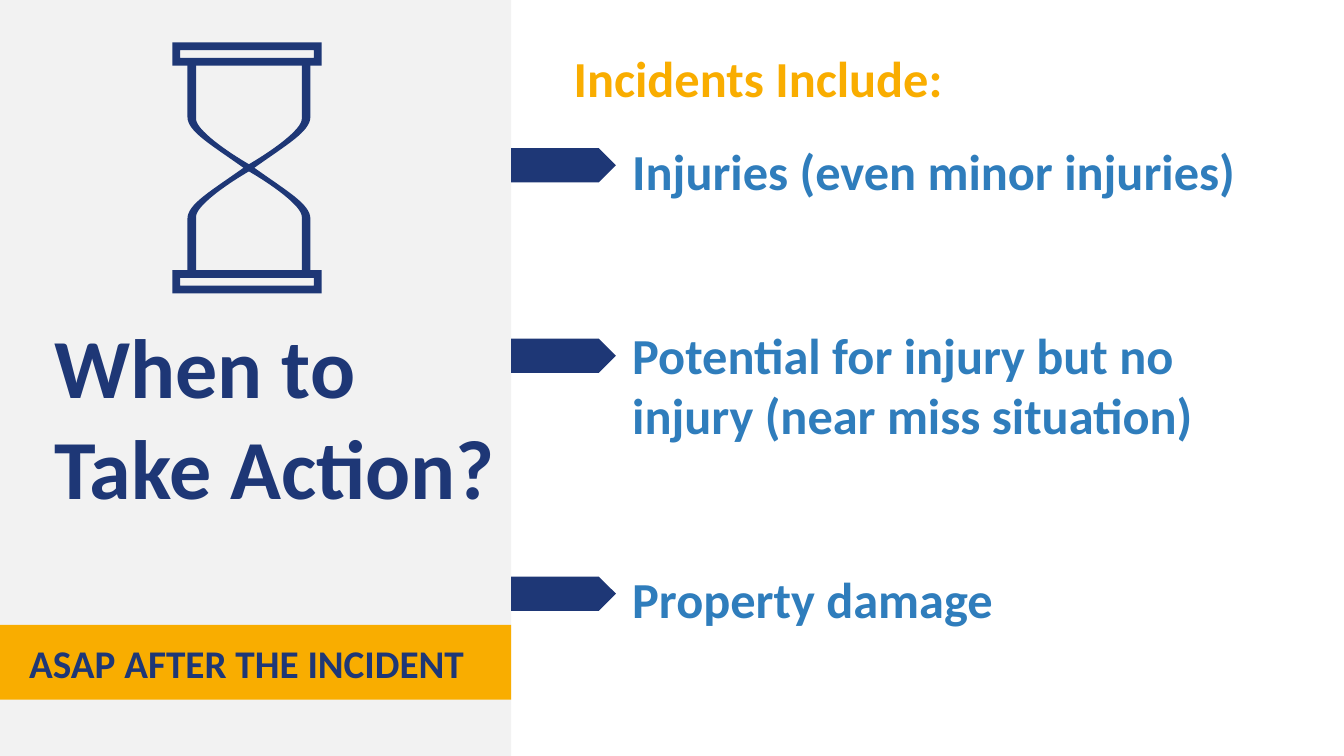
from dataclasses import dataclass

from pptx import Presentation
from pptx.dml.color import RGBColor
from pptx.enum.shapes import MSO_SHAPE
from pptx.enum.text import MSO_ANCHOR, MSO_AUTO_SIZE, PP_ALIGN
from pptx.util import Inches, Pt

SLIDE_WIDTH = Inches(13.33)
SLIDE_HEIGHT = Inches(7.5)


@dataclass(frozen=True)
class Theme:
    font: str = "Calibri"
    navy: RGBColor = RGBColor.from_string("1E3776")
    amber: RGBColor = RGBColor.from_string("F9AD00")
    blue: RGBColor = RGBColor.from_string("2F7DBC")
    panel_grey: RGBColor = RGBColor.from_string("F2F2F2")
    title_size: int = 60
    list_size: int = 36
    banner_size: int = 28
    incident_gap: int = 88


THEME = Theme()
PANEL_WIDTH = 38.03
INCIDENTS = [
    "Injuries (even minor injuries)",
    "Potential for injury but no injury (near miss situation)",
    "Property damage",
]
POINTER_TOPS = [19.6, 44.8, 76.27]


def area(left, top, width, height):
    """Turn percentages of the slide into lengths."""
    return (
        round(SLIDE_WIDTH * left / 100),
        round(SLIDE_HEIGHT * top / 100),
        round(SLIDE_WIDTH * width / 100),
        round(SLIDE_HEIGHT * height / 100),
    )


def paint(shape, color):
    shape.fill.solid()
    shape.fill.fore_color.rgb = color
    shape.line.fill.background()
    shape.shadow.inherit = False


def add_block(shapes, preset, place, color):
    block = shapes.add_shape(preset, *area(*place))
    paint(block, color)
    return block


def write(holder, place, lines, size, color, align=PP_ALIGN.LEFT, gap=0):
    """Place a text holder and fill it with bold lines, gap points apart."""
    holder.left, holder.top, holder.width, holder.height = area(*place)
    frame = holder.text_frame
    frame.text = "\n".join(lines)
    frame.word_wrap = True
    frame.auto_size = MSO_AUTO_SIZE.NONE
    frame.vertical_anchor = MSO_ANCHOR.TOP
    for index, paragraph in enumerate(frame.paragraphs):
        paragraph.alignment = align
        paragraph.space_before = Pt(gap if index else 0)
        paragraph.font.name = THEME.font
        paragraph.font.size = Pt(size)
        paragraph.font.bold = True
        paragraph.font.color.rgb = color


def add_label(shapes, place, *text_format):
    write(shapes.add_textbox(*area(*place)), place, *text_format)


def remove_bullets(holder):
    for paragraph in holder.text_frame.paragraphs:
        properties = paragraph._p.get_or_add_pPr()
        properties.set("marL", "0")
        properties.set("indent", "0")
        properties.get_or_add_buNone() if hasattr(
            properties, "get_or_add_buNone"
        ) else properties.append(
            properties.makeelement(
                "{http://schemas.openxmlformats.org/drawingml/2006/main}buNone", {}
            )
        )


def curve(start, first_pull, second_pull, end, steps=16):
    """Points along a cubic Bezier curve, without its start."""
    points = []
    for step in range(1, steps + 1):
        t = step / steps
        weights = ((1 - t) ** 3, 3 * t * (1 - t) ** 2, 3 * t**2 * (1 - t), t**3)
        controls = (start, first_pull, second_pull, end)
        points.append(
            tuple(sum(w * c[axis] for w, c in zip(weights, controls)) for axis in (0, 1))
        )
    return points


def strand_outline():
    """One glass wall in a unit box; its second edge is the first turned half round."""
    shoulder, waist, neck = (0, 0.74), (0.48, 0.49), (0.93, 0.27)
    edge = [(0, 1), shoulder]
    edge += curve(shoulder, (0, 0.67), (0.19, 0.61), waist)
    edge += curve(waist, (0.69, 0.42), (0.93, 0.32), neck)
    edge.append((0.93, 0))
    return edge + [(1 - x, 1 - y) for x, y in edge]


def add_hourglass(shapes):
    hourglass = shapes.add_group_shape().shapes
    for cap_top in (5.6, 35.73):
        cap = add_block(
            hourglass, MSO_SHAPE.FRAME, (12.83, cap_top, 11.1, 3.07), THEME.navy
        )
        cap.adjustments[0] = 0.33

    left, top, width, height = area(13.95, 8.13, 9.15, 28.13)
    outline = strand_outline()
    mirrored = [(1 - x, y) for x, y in outline]
    for wall in (outline, mirrored):
        corners = [(round(left + x * width), round(top + y * height)) for x, y in wall]
        builder = hourglass.build_freeform(*corners[0])
        builder.add_line_segments(corners[1:], close=True)
        paint(builder.convert_to_shape(), THEME.navy)


def main():
    deck = Presentation()
    deck.slide_width, deck.slide_height = SLIDE_WIDTH, SLIDE_HEIGHT
    slide = deck.slides.add_slide(deck.slide_layouts[1])
    shapes = slide.shapes
    title, incidents = shapes.title, slide.placeholders[1]

    panel = add_block(
        shapes, MSO_SHAPE.RECTANGLE, (0, 0, PANEL_WIDTH, 100), THEME.panel_grey
    )
    title._element.addprevious(panel._element)
    write(title, (3.3, 40.93, 34.96, 28.27), ["When to", "Take Action?"],
          THEME.title_size, THEME.navy)
    add_hourglass(shapes)

    add_block(shapes, MSO_SHAPE.RECTANGLE, (0, 82.67, PANEL_WIDTH, 9.87), THEME.amber)
    add_label(shapes, (1.2, 83.87, 34.28, 7.6), ["ASAP AFTER THE INCIDENT"],
              THEME.banner_size, THEME.navy, PP_ALIGN.CENTER)

    add_label(shapes, (41.94, 5.6, 29.26, 9.47), ["Incidents Include:"],
              THEME.list_size, THEME.amber)
    write(incidents, (46.29, 17.87, 50.04, 66), INCIDENTS,
          THEME.list_size, THEME.blue, gap=THEME.incident_gap)
    remove_bullets(incidents)
    for pointer_top in POINTER_TOPS:
        add_block(shapes, MSO_SHAPE.PENTAGON, (PANEL_WIDTH, pointer_top, 7.8, 4.53),
                  THEME.navy)

    deck.save("out.pptx")


if __name__ == "__main__":
    main()
